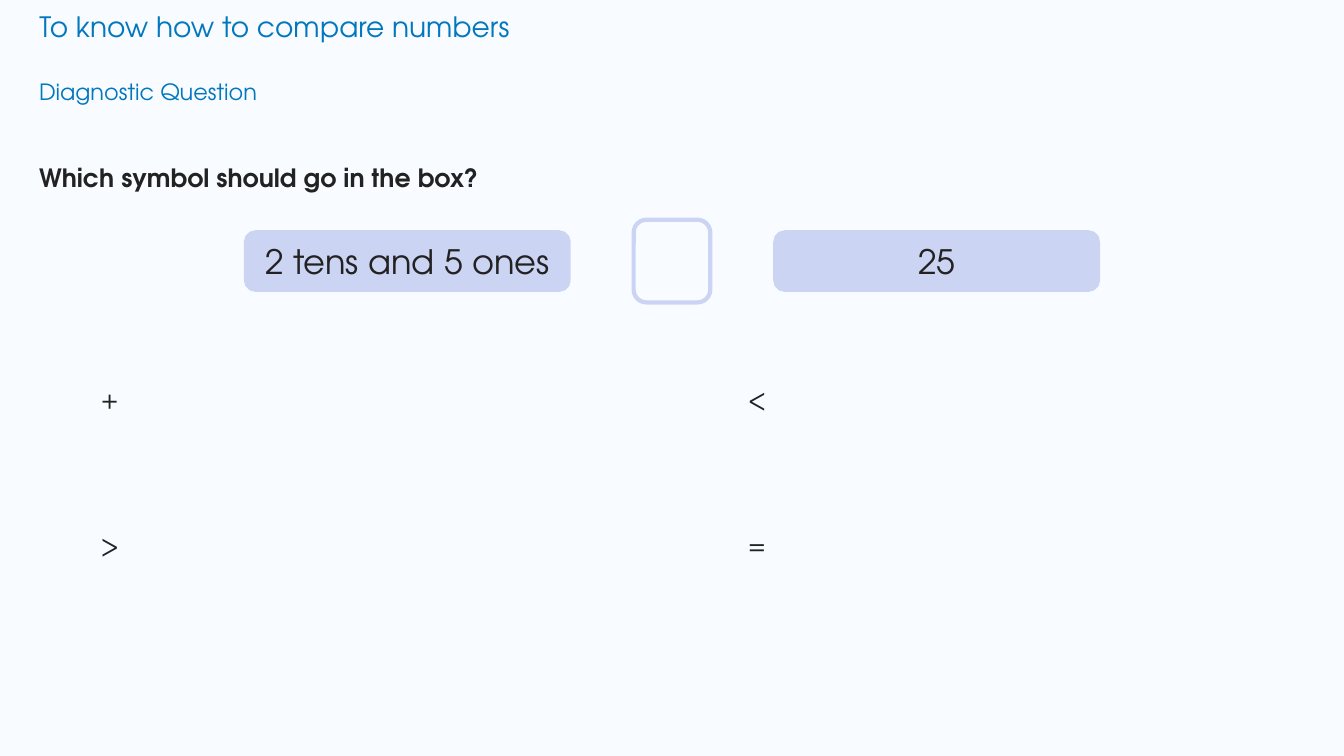
from pptx import Presentation
from pptx.dml.color import RGBColor
from pptx.enum import shapes, text
from pptx.util import Inches, Pt

FONT = "TeX Gyre Adventor"
COLORS = {"background": "F8FBFF", "heading": "0277BD", "ink": "222222", "panel": "CCD4F4"}


def color(name):
    return RGBColor.from_string(COLORS[name])


def write(shape, wording, size, ink="ink", bold=False, spacing=1.0,
          align=text.PP_ALIGN.LEFT, anchor=text.MSO_ANCHOR.TOP):
    frame = shape.text_frame
    frame.text = wording
    frame.word_wrap = True
    frame.auto_size = text.MSO_AUTO_SIZE.NONE
    frame.vertical_anchor = anchor
    paragraph = frame.paragraphs[0]
    paragraph.alignment = align
    paragraph.line_spacing = spacing
    paragraph.font.name = FONT
    paragraph.font.size = Pt(size)
    paragraph.font.bold = bold
    paragraph.font.color.rgb = color(ink)


def add_label(slide, left, top, width, height, wording, size, **style):
    label = slide.shapes.add_textbox(Inches(left), Inches(top), Inches(width), Inches(height))
    write(label, wording, size, **style)


def add_headings(slide, left, top, width):
    title = slide.shapes.title
    title.left, title.top = Inches(left), Inches(top)
    title.width, title.height = Inches(width), Inches(0.44)
    write(title, "To know how to compare numbers", 20, ink="heading")
    add_label(slide, left, top + 0.69, 3.44, 0.37, "Diagnostic Question", 16, ink="heading")
    add_label(slide, left, top + 1.37, width, 0.57, "Which symbol should go in the box?", 18,
              bold=True, spacing=1.5)


def add_panel(slide, left, top, width, height, wording=None):
    panel = slide.shapes.add_shape(shapes.MSO_SHAPE.ROUNDED_RECTANGLE, Inches(left),
                                   Inches(top), Inches(width), Inches(height))
    panel.shadow.inherit = False
    panel.line.color.rgb = color("panel")
    panel.line.width = Pt(3)
    if wording is None:
        panel.fill.background()
        return
    panel.fill.solid()
    panel.fill.fore_color.rgb = color("panel")
    write(panel, wording, 24, align=text.PP_ALIGN.CENTER, anchor=text.MSO_ANCHOR.MIDDLE)


def add_comparison(slide, left, top, width, height):
    side_width, side_height, answer_width = 3.2, 0.57, 0.76
    side_top = top + (height - side_height) / 2
    add_panel(slide, left, side_top, side_width, side_height, "2 tens and 5 ones")
    add_panel(slide, left + (width - answer_width) / 2, top, answer_width, height)
    add_panel(slide, left + width - side_width, side_top, side_width, side_height, "25")


def add_options(slide, left, top, column_step, row_step):
    for index, symbol in enumerate("+<>="):
        row, column = divmod(index, 2)
        add_label(slide, left + column * column_step, top + row * row_step, 5.67, 0.37,
                  symbol, 18, spacing=0.9)


def main():
    presentation = Presentation()
    presentation.slide_width, presentation.slide_height = Inches(13.33), Inches(7.5)
    slide = presentation.slides.add_slide(presentation.slide_layouts[5])
    slide.background.fill.solid()
    slide.background.fill.fore_color.rgb = color("background")
    add_headings(slide, 0.29, 0.04, 12.84)
    add_comparison(slide, 2.44, 2.18, 8.45, 0.82)
    add_options(slide, 0.9, 3.79, 6.42, 1.45)
    presentation.save("out.pptx")


if __name__ == "__main__":
    main()
